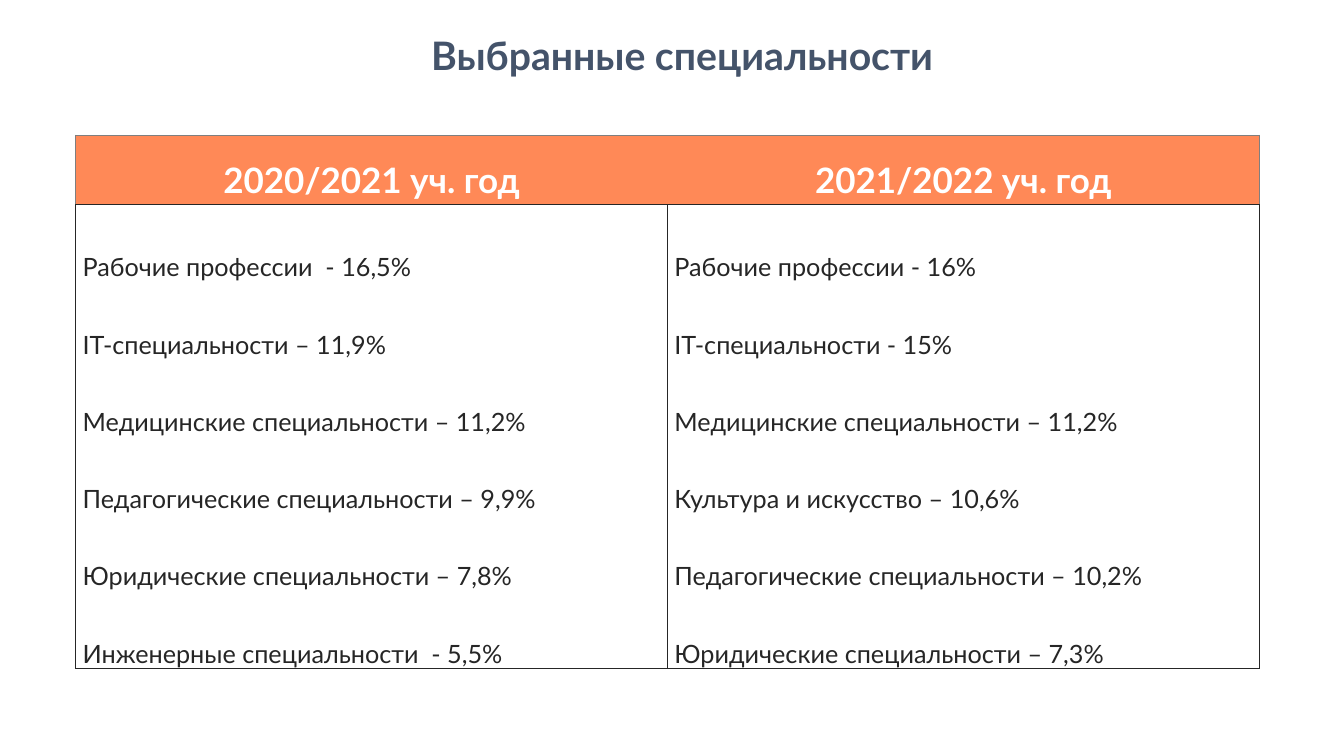
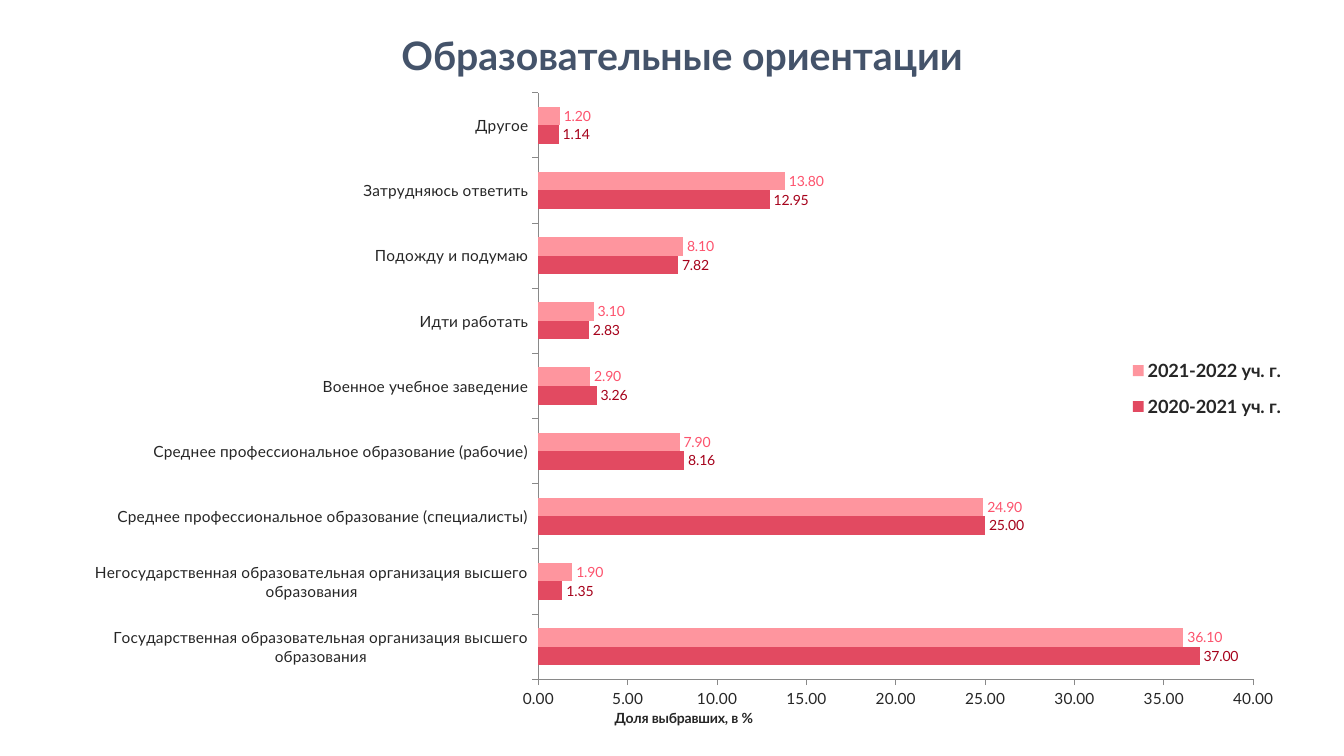
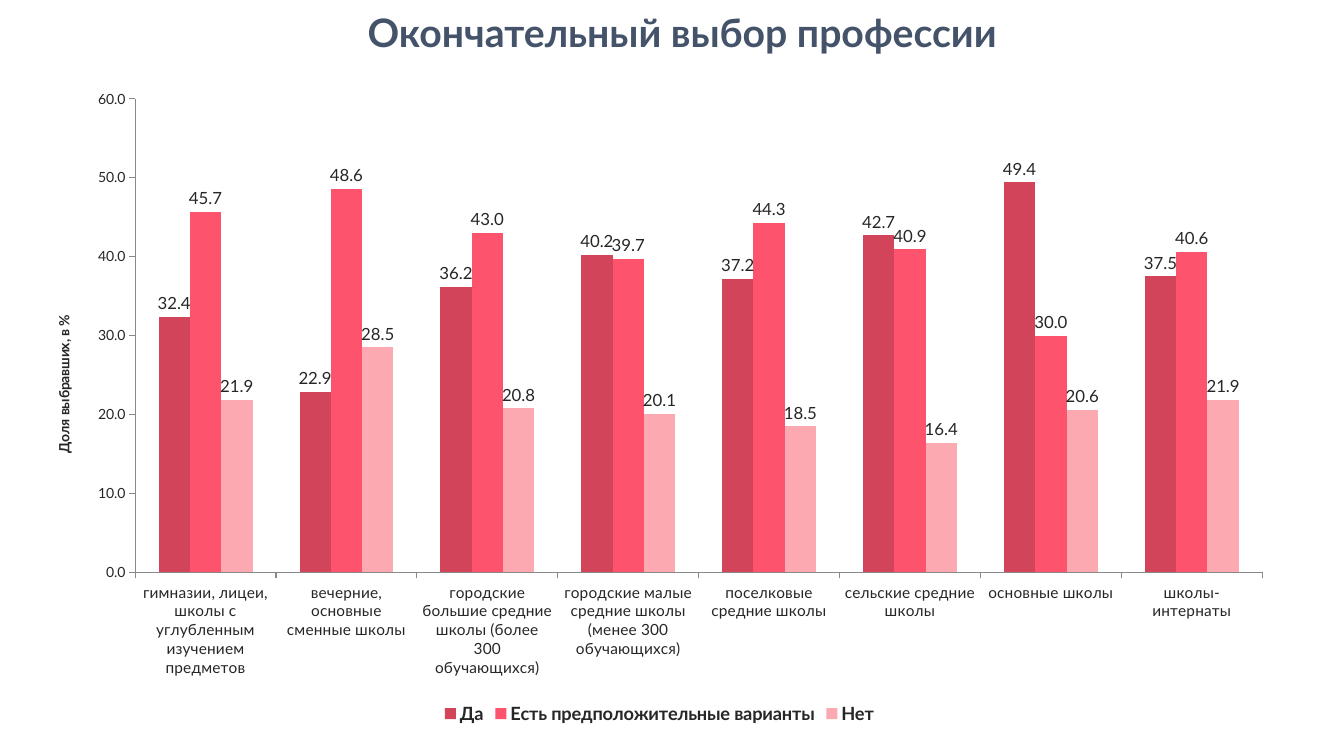
from lxml import etree
from pptx import Presentation
from pptx.chart.data import CategoryChartData
from pptx.dml.color import RGBColor
from pptx.enum.chart import XL_CHART_TYPE as CT, XL_LABEL_POSITION as LP
from pptx.enum.chart import XL_LEGEND_POSITION as LEG, XL_TICK_MARK as TICK
from pptx.enum.text import MSO_ANCHOR, MSO_AUTO_SIZE, PP_ALIGN
from pptx.oxml import parse_xml
from pptx.oxml.ns import nsdecls, qn
from pptx.util import Inches, Pt

FONT = "Lato"
TITLE, TEXT, WHITE, ORANGE = "44536A", "262626", "FFFFFF", "FF8957"
AXIS = "898989"


def rgb(color):
    return RGBColor.from_string(color)


def place(parent, chart_at, x, y, w=None, h=None):
    """Fix a chart part at inches from the chart's corner."""
    for old in parent.findall(qn("c:layout")):
        parent.remove(old)
    layout = parse_xml(f"<c:layout {nsdecls('c')}><c:manualLayout/></c:layout>")
    _, _, width, height = chart_at
    items = [("xMode", "edge"), ("yMode", "edge"), ("x", x / width), ("y", y / height)]
    if w:
        items += [("w", w / width), ("h", h / height)]
    overlay = parent.find(qn("c:overlay"))
    if overlay is None:  # the plot area
        items.insert(0, ("layoutTarget", "inner"))
        parent.insert(0, layout)
    else:
        overlay.addprevious(layout)
    for tag, val in items:
        etree.SubElement(layout[0], qn(f"c:{tag}")).set("val", str(val))


prs = Presentation()
prs.slide_width, prs.slide_height = Inches(13.33), Inches(7.5)

# Slides and titles: text, line spacing, box height
titles = [
    ("Выбранные специальности", 1.5, 0.72),
    ("Образовательные ориентации", 1.5, 0.72),
    ("Окончательный выбор профессии", 1.0, 0.57),
]
slides = []
for text, spacing, height in titles:
    s = prs.slides.add_slide(prs.slide_layouts[6])
    slides.append(s)
    box = s.shapes.add_textbox(Inches(0.48), Inches(0.03), Inches(12.57), Inches(height))
    tf = box.text_frame
    tf.word_wrap = True
    tf.auto_size = MSO_AUTO_SIZE.SHAPE_TO_FIT_TEXT
    tf.text = text
    p = tf.paragraphs[0]
    p.alignment, p.line_spacing = PP_ALIGN.CENTER, spacing
    font = p.runs[0].font
    font.name, font.size, font.bold = FONT, Pt(28), True
    font.color.rgb = rgb(TITLE)

# Slide 1: table of chosen specialities
years = {
    "2020/2021 уч. год": [
        "Рабочие профессии  - 16,5%",
        "IT-специальности – 11,9%",
        "Медицинские специальности – 11,2%",
        "Педагогические специальности – 9,9%",
        "Юридические специальности – 7,8%",
        "Инженерные специальности  - 5,5%",
    ],
    "2021/2022 уч. год": [
        "Рабочие профессии - 16%",
        "IT-специальности - 15%",
        "Медицинские специальности – 11,2%",
        "Культура и искусство – 10,6%",
        "Педагогические специальности – 10,2%",
        "Юридические специальности – 7,3%",
    ],
}
table = slides[0].shapes.add_table(
    2, 2, Inches(0.75), Inches(1.34), Inches(11.74), Inches(5.29)).table
table.horz_banding = False
table.rows[0].height, table.rows[1].height = Inches(0.69), Inches(4.6)
thin, solid = (0.5, "7F7F7F"), (1, TEXT)

for col, (year, lines) in enumerate(years.items()):
    table.columns[col].width = Inches(5.87)
    for row, texts in enumerate([[year], lines]):
        head = row == 0
        cell = table.cell(row, col)
        cell.margin_left = cell.margin_right = Inches(0.07)
        cell.margin_top, cell.margin_bottom = Inches(0 if head else 0.47), 0
        cell.vertical_anchor = MSO_ANCHOR.MIDDLE if head else MSO_ANCHOR.TOP

        # Borders: the header has no line between its cells
        if head:
            sides = {"L": None if col else thin, "R": thin if col else None,
                     "T": thin, "B": solid}
        else:
            sides = dict.fromkeys("LRTB", solid)
        tc_pr = cell._tc.get_or_add_tcPr()
        for side, line in sides.items():
            ln = etree.SubElement(tc_pr, qn(f"a:ln{side}"))
            if line:
                ln.set("w", str(Pt(line[0])))
                fill = etree.SubElement(ln, qn("a:solidFill"))
                etree.SubElement(fill, qn("a:srgbClr")).set("val", line[1])
            else:
                etree.SubElement(ln, qn("a:noFill"))
        if head:
            cell.fill.solid()
            cell.fill.fore_color.rgb = rgb(ORANGE)
        else:
            cell.fill.background()

        tf = cell.text_frame
        tf.text = "\n".join(texts)
        for i, p in enumerate(tf.paragraphs):
            if head:
                p.alignment, p.line_spacing = PP_ALIGN.CENTER, 1.5
            elif i:
                p.space_before = Pt(33.6)
            font = p.runs[0].font
            font.name, font.bold = FONT, head
            font.size = Pt(25 if head else 18)
            font.color.rgb = rgb(WHITE if head else TEXT)

# Slides 2 and 3: charts; a series is name, values, fill, label colour
charts = [
    dict(
        slide=slides[1], kind=CT.BAR_CLUSTERED, at=(0.85, 0.75, 12, 6.5),
        plot=(4.49, 0.17, 7.09, 5.82), title_at=(5.22, 6.25),
        legend=LEG.RIGHT, legend_at=(10.32, 2.68, 1.6, 0.85), fmt="0.00",
        top=40, step=5, value_size=11, label_size=10,
        cats=[
            "Государственная образовательная организация высшего образования",
            "Негосударственная образовательная организация высшего образования",
            "Среднее профессиональное образование (специалисты)",
            "Среднее профессиональное образование (рабочие)",
            "Военное учебное заведение",
            "Идти работать",
            "Подожду и подумаю",
            "Затрудняюсь ответить",
            "Другое",
        ],
        series=[
            ("2020-2021 уч. г.", [37, 1.35, 25, 8.16, 3.26, 2.83, 7.82, 12.95, 1.14],
             "E24A61", "A6021B"),
            ("2021-2022 уч. г.", [36.1, 1.9, 24.9, 7.9, 2.9, 3.1, 8.1, 13.8, 1.2],
             "FE959E", "FD536D"),
        ],
    ),
    dict(
        slide=slides[2], kind=CT.COLUMN_CLUSTERED, at=(0.3, 0.78, 12.48, 6.45),
        plot=(1.04, 0.2, 11.18, 4.7), title_at=(0.21, 2.32),
        legend=LEG.BOTTOM, legend_at=None, fmt="0.0",
        top=60, step=10, value_size=10, label_size=12,
        cats=[
            "гимназии, лицеи, школы с углубленным изучением предметов",
            "вечерние, основные сменные школы",
            "городские большие средние школы (более 300 обучающихся)",
            "городские малые средние школы (менее 300 обучающихся)",
            "поселковые средние школы",
            "сельские средние школы",
            "основные школы",
            "школы-интернаты",
        ],
        series=[
            ("Да", [32.4, 22.9, 36.2, 40.2, 37.2, 42.7, 49.4, 37.5], "D1445A", TEXT),
            ("Есть предположительные варианты",
             [45.7, 48.6, 43, 39.7, 44.3, 40.9, 30, 40.6], "FD536D", TEXT),
            ("Нет", [21.9, 28.5, 20.8, 20.1, 18.5, 16.4, 20.6, 21.9], "FDA9B1", TEXT),
        ],
    ),
]
for c in charts:
    data = CategoryChartData(number_format=c["fmt"])
    data.categories = c["cats"]
    for name, values, _, _ in c["series"]:
        data.add_series(name, values)
    at = [Inches(v) for v in c["at"]]
    chart = c["slide"].shapes.add_chart(c["kind"], *at, data).chart
    chart.has_title = False
    chart.font.name, chart.font.size = FONT, Pt(18)
    chart.font.color.rgb = rgb(TEXT)
    place(chart._chartSpace.chart.plotArea, c["at"], *c["plot"])

    # Bars and their labels
    plot = chart.plots[0]
    plot.gap_width, plot.overlap, plot.vary_by_categories = 150, 0, False
    for ser, (_, _, color, label_color) in zip(plot.series, c["series"]):
        ser.format.fill.solid()
        ser.format.fill.fore_color.rgb = rgb(color)
        ser.invert_if_negative = False
        labels = ser.data_labels
        labels.show_value, labels.position = True, LP.OUTSIDE_END
        labels.number_format, labels.number_format_is_linked = c["fmt"], False
        labels.font.name, labels.font.size = FONT, Pt(c["label_size"])
        labels.font.color.rgb = rgb(label_color)

    # Axes
    cat, val = chart.category_axis, chart.value_axis
    for axis, size in ((cat, 11), (val, c["value_size"])):
        axis.has_major_gridlines = False
        axis.major_tick_mark, axis.minor_tick_mark = TICK.OUTSIDE, TICK.NONE
        axis.tick_labels.font.size = Pt(size)
        axis._element.find(qn("c:txPr")).find(qn("a:bodyPr")).set("rot", "0")
        axis.format.line.color.rgb = rgb(AXIS)
        axis.format.line.width = Pt(0.75)
    val.minimum_scale, val.maximum_scale, val.major_unit = 0, c["top"], c["step"]
    val.tick_labels.number_format = c["fmt"]
    val.tick_labels.number_format_is_linked = False
    tf = val.axis_title.text_frame
    tf.text = "Доля выбравших, в %"
    font = tf.paragraphs[0].runs[0].font
    font.name, font.size, font.bold = FONT, Pt(10), True
    font.color.rgb = rgb(TEXT)
    upright = c["kind"] == CT.COLUMN_CLUSTERED
    tf._txBody.bodyPr.set("rot", "-5400000" if upright else "0")
    tf._txBody.bodyPr.set("vert", "horz")
    place(val.axis_title._element, c["at"], *c["title_at"])

    # Legend
    chart.has_legend = True
    legend = chart.legend
    legend.position, legend.include_in_layout = c["legend"], False
    legend.font.size, legend.font.bold = Pt(13), True
    if c["legend_at"]:
        place(legend._element, c["at"], *c["legend_at"])

prs.save("out.pptx")
